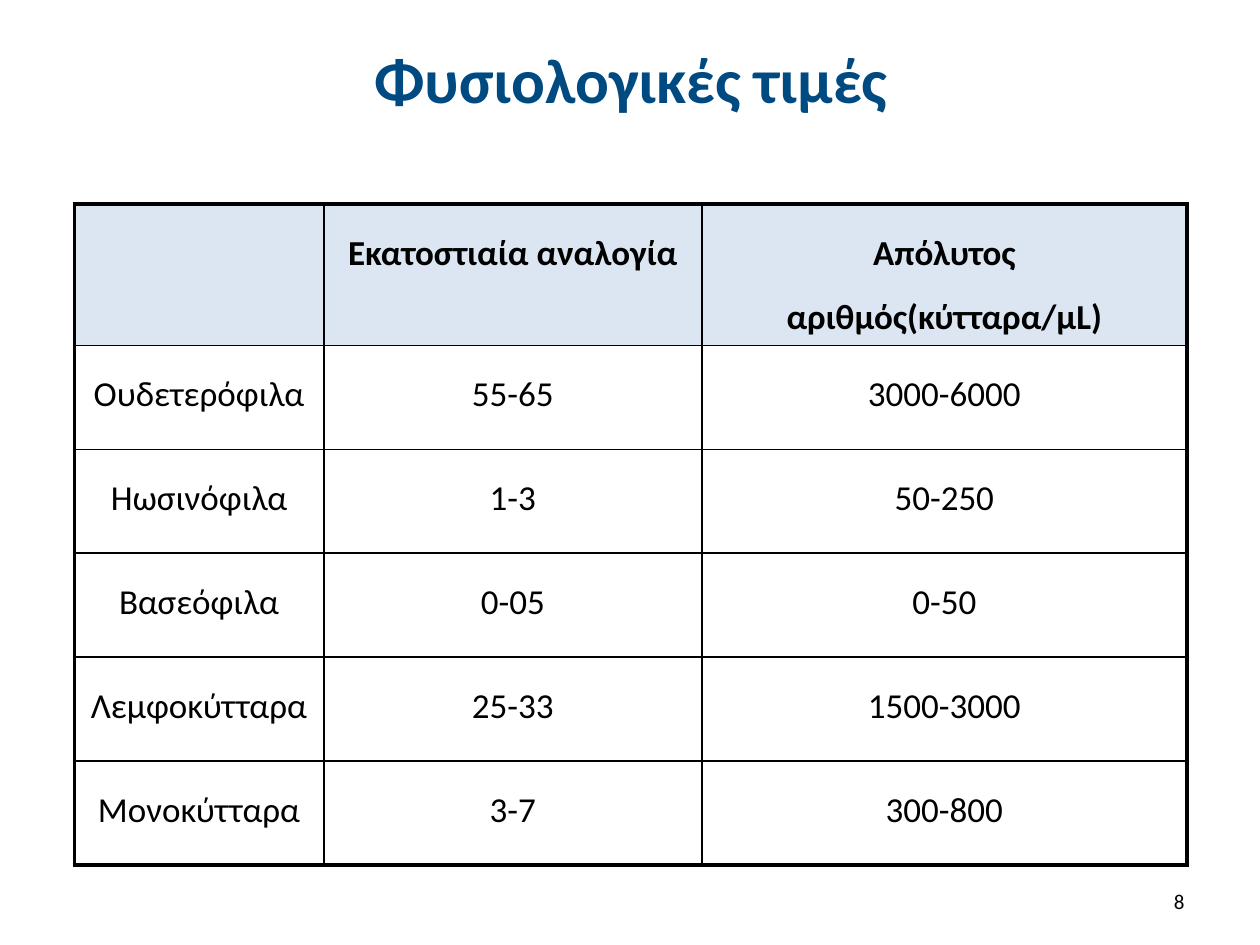
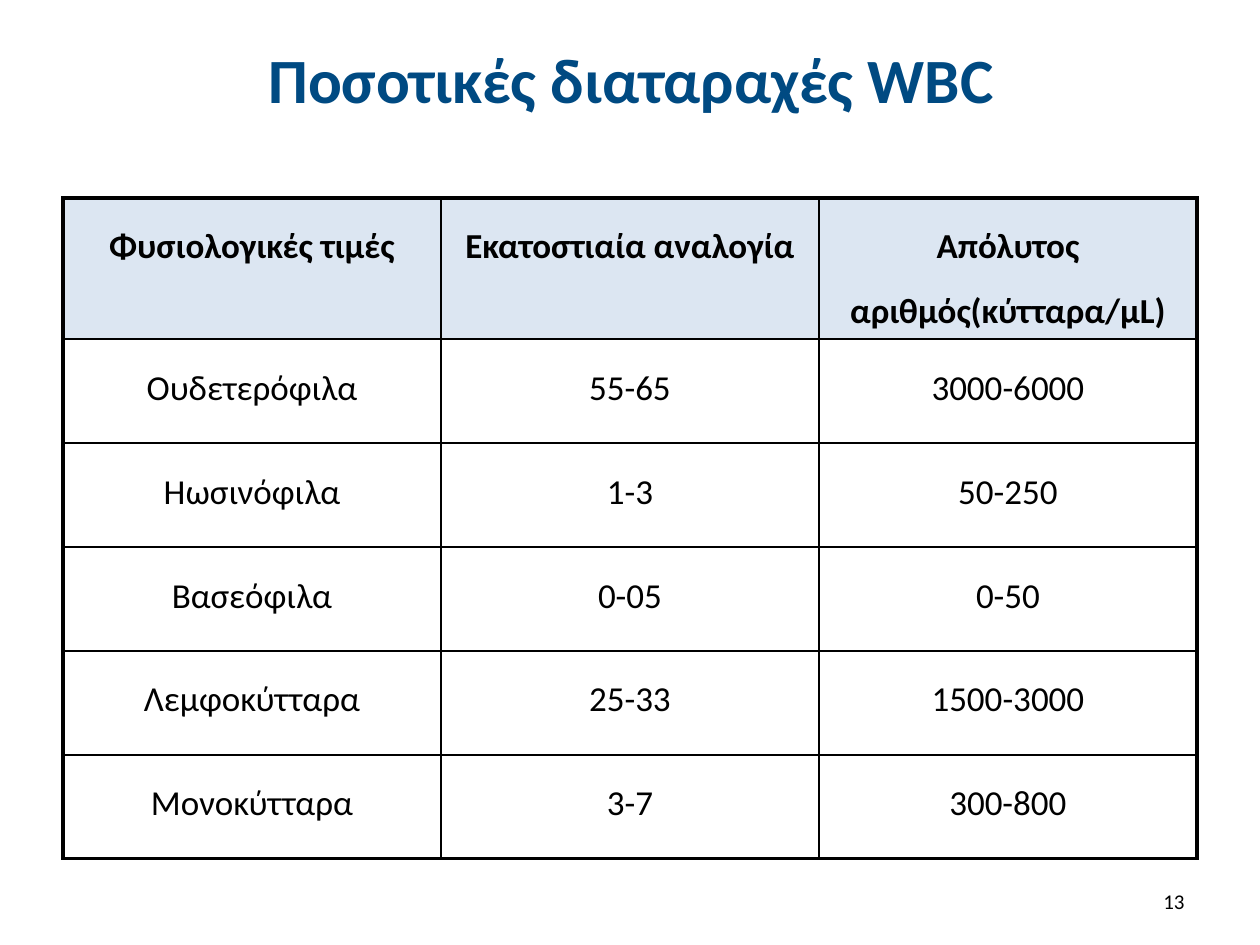
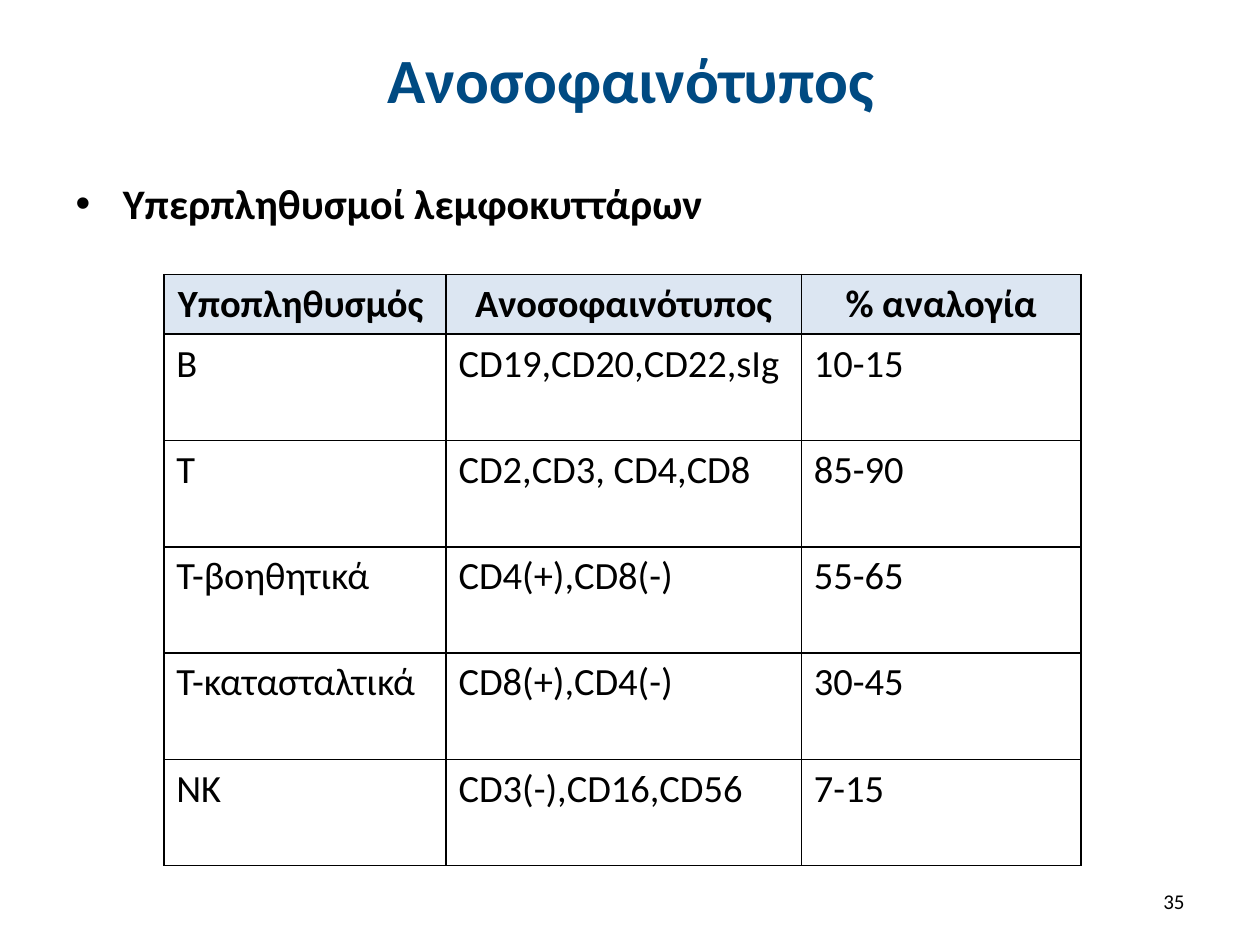
from lxml import etree
from pptx import Presentation
from pptx.dml.color import RGBColor
from pptx.enum.text import MSO_ANCHOR, MSO_AUTO_SIZE, PP_ALIGN
from pptx.oxml.ns import qn
from pptx.util import Inches, Pt

FONT = "Calibri"
BLACK = "000000"
TITLE_BLUE = "004A82"
HEADER_BLUE = "DCE6F2"
THIN = 1
THICK = 2.25


def style_text(frame, size, color=BLACK, bold=False, align=PP_ALIGN.LEFT, spacing=1.0):
    for para in frame.paragraphs:
        para.alignment = align
        para.line_spacing = spacing
        para.space_before = Pt(0)
        for span in para.runs:
            span.font.name = FONT
            span.font.size = Pt(size)
            span.font.bold = bold
            span.font.color.rgb = RGBColor.from_string(color)


def add_border(cell, side, width):
    """Draw one cell edge; side is L, R, T or B. Call before setting the fill."""
    properties = cell._tc.get_or_add_tcPr()
    line = etree.SubElement(properties, qn(f"a:ln{side}"), w=str(Pt(width)))
    fill = etree.SubElement(line, qn("a:solidFill"))
    etree.SubElement(fill, qn("a:srgbClr"), val=BLACK)


blood_cells = [
    ["Ουδετερόφιλα", "55-65", "3000-6000"],
    ["Ηωσινόφιλα", "1-3", "50-250"],
    ["Βασεόφιλα", "0-05", "0-50"],
    ["Λεμφοκύτταρα", "25-33", "1500-3000"],
    ["Μονοκύτταρα", "3-7", "300-800"],
]
count_headers = ["Εκατοστιαία αναλογία", "Απόλυτος αριθμός(κύτταρα/μL)"]
subsets = [
    ["Υποπληθυσμός ", "Ανοσοφαινότυπος", "% αναλογία"],
    ["Β", "CD19,CD20,CD22,sIg", "10-15"],
    ["T", "CD2,CD3, CD4,CD8", "85-90"],
    ["T-βοηθητικά", "CD4(+),CD8(-)", "55-65"],
    ["T-κατασταλτικά", "CD8(+),CD4(-)", "30-45"],
    ["ΝΚ", "CD3(-),CD16,CD56", "7-15"],
]

count_style = {"header_height": 1.12, "row_height": 0.825, "size": 20,
               "spacing": 1.5, "align": PP_ALIGN.CENTER, "outline": THICK}
subset_style = {"header_height": 0.47, "row_height": 0.844, "size": 22,
                "spacing": 1.0, "align": PP_ALIGN.LEFT, "outline": THIN}

slides = [
    {"title": "Φυσιολογικές τιμές", "number": 8, "bullet": None,
     "rows": [["", *count_headers], *blood_cells],
     "left": 0.59, "top": 1.62, "columns": [1.98, 3, 3.85], "style": count_style},
    {"title": "Ποσοτικές διαταραχές WBC", "number": 13, "bullet": None,
     "rows": [["Φυσιολογικές τιμές", *count_headers], *blood_cells],
     "left": 0.5, "top": 1.57, "columns": [3, 3, 3], "style": count_style},
    {"title": "Ανοσοφαινότυπος", "number": 35, "bullet": "Υπερπληθυσμοί λεμφοκυττάρων",
     "rows": subsets,
     "left": 1.3, "top": 2.18, "columns": [2.24, 2.82, 2.22], "style": subset_style},
]

deck = Presentation()
deck.slide_width = Inches(10)
deck.slide_height = Inches(7.5)
title_and_body = deck.slide_layouts[1]
title_only = deck.slide_layouts[5]

for content in slides:
    page = deck.slides.add_slide(title_and_body if content["bullet"] else title_only)

    title = page.shapes.title
    title.left, title.top = Inches(0.51), Inches(0.13)
    title.width, title.height = Inches(9), Inches(0.99)
    title.text_frame.text = content["title"]
    title.text_frame.auto_size = MSO_AUTO_SIZE.NONE
    title.text_frame.vertical_anchor = MSO_ANCHOR.MIDDLE
    style_text(title.text_frame, 36, TITLE_BLUE, bold=True, align=PP_ALIGN.CENTER)

    if content["bullet"]:
        body = page.placeholders[1]
        body.left, body.top = Inches(0.5), Inches(1.31)
        body.width, body.height = Inches(9), Inches(0.87)
        body.text_frame.text = content["bullet"]
        body.text_frame.auto_size = MSO_AUTO_SIZE.NONE
        style_text(body.text_frame, 24, bold=True, spacing=1.12)

    rows, columns, style = content["rows"], content["columns"], content["style"]
    heights = [style["header_height"]] + [style["row_height"]] * (len(rows) - 1)
    table = page.shapes.add_table(
        len(rows), len(columns), Inches(content["left"]), Inches(content["top"]),
        Inches(sum(columns)), Inches(sum(heights))).table
    table.first_row = False
    table.horz_banding = False
    for column, width in zip(table.columns, columns):
        column.width = Inches(width)
    for row, height in zip(table.rows, heights):
        row.height = Inches(height)

    for r, texts in enumerate(rows):
        for c, text in enumerate(texts):
            cell = table.cell(r, c)
            is_header = r == 0
            on_outline = {"L": c == 0, "R": c == len(columns) - 1,
                          "T": is_header, "B": r == len(rows) - 1}
            for side, is_outer in on_outline.items():
                add_border(cell, side, style["outline"] if is_outer else THIN)
            if is_header:
                cell.fill.solid()
                cell.fill.fore_color.rgb = RGBColor.from_string(HEADER_BLUE)
            else:
                cell.fill.background()
            cell.text_frame.text = text
            style_text(cell.text_frame, style["size"], bold=is_header,
                       align=PP_ALIGN.CENTER if is_header else style["align"],
                       spacing=style["spacing"])

    number_box = page.shapes.add_textbox(Inches(7.17), Inches(6.95), Inches(2.33), Inches(0.4))
    number_box.text_frame.word_wrap = True
    number_box.text_frame.vertical_anchor = MSO_ANCHOR.MIDDLE
    number_box.text_frame.text = str(content["number"])
    style_text(number_box.text_frame, 12, align=PP_ALIGN.RIGHT)

deck.save("out.pptx")
